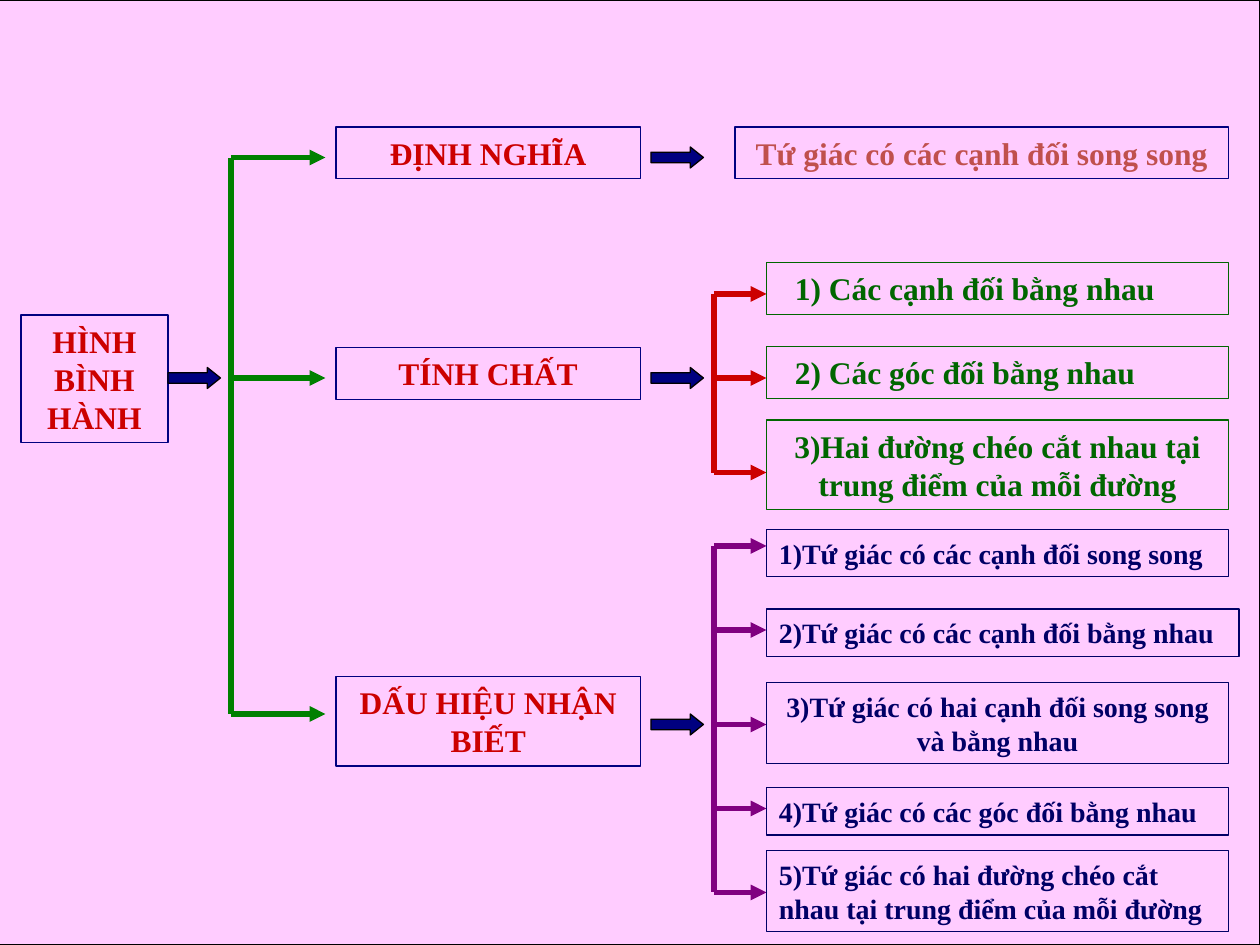
from lxml import etree
from pptx import Presentation
from pptx import util as u
from pptx.dml import color
from pptx.enum import shapes, text
from pptx.oxml import ns

Pt = u.Pt
LEFT, CENTER = text.PP_ALIGN.LEFT, text.PP_ALIGN.CENTER
NAVY, RED, GREEN, INK = "000080", "CC0000", "006600", "000066"


def rgb(value):
    return color.RGBColor.from_string(value)


def apply_format(target, values):
    for name, value in values.items():
        setattr(target, name, value)


def draw_shape(page, kind, box, outline, fill=None):
    shape = page.shapes.add_shape(kind, *(Pt(length) for length in box))
    shape.shadow.inherit = False
    if fill:
        shape.fill.solid()
        shape.fill.fore_color.rgb = rgb(fill)
    else:
        shape.fill.background()
    shape.line.color.rgb = rgb(outline)
    shape.line.width = Pt(0.75)
    return shape


def draw_label(page, box, words, ink, outline, size=18, align=CENTER, indent=0):
    shape = draw_shape(page, shapes.MSO_SHAPE.RECTANGLE, box, outline)
    frame = shape.text_frame
    apply_format(frame, {
        "word_wrap": True,
        "vertical_anchor": text.MSO_ANCHOR.MIDDLE,
        "margin_left": Pt(7.2 + indent),
    })
    para = frame.paragraphs[0]
    para.alignment = align
    span = para.add_run()
    span.text = words
    apply_format(span.font, {"name": "Times New Roman", "size": Pt(size), "bold": True})
    span.font.color.rgb = rgb(ink)


def draw_column(page, box, entries, ink, outline, size=18):
    left, top, width = box
    for offset, lines, words, options in entries:
        style = dict(options)
        full_width = width + style.pop("extra", 0)
        height = 8 + 1.2 * size * lines
        draw_label(page, (left, top + offset, full_width, height),
                   words, ink, outline, size, **style)


def draw_line(page, start, end, ink, arrow=False):
    line = page.shapes.add_connector(
        shapes.MSO_CONNECTOR.STRAIGHT, *(Pt(length) for length in start + end))
    line.line.color.rgb = rgb(ink)
    line.line.width = Pt(3)
    if arrow:
        etree.SubElement(line.line._get_or_add_ln(), ns.qn("a:tailEnd"), type="triangle")
    etree.SubElement(line._element.spPr, ns.qn("a:effectLst"))


def draw_branch(page, box, offsets, ink):
    left, top, width = box
    draw_line(page, (left, top), (left, top + offsets[-1]), ink)
    for offset in offsets:
        draw_line(page, (left, top + offset), (left + width, top + offset), ink, True)


def draw_block_arrow(page, left, top):
    arrow = draw_shape(page, shapes.MSO_SHAPE.RIGHT_ARROW, (left, top, 30, 12), "000000", NAVY)
    arrow.adjustments[1] = 0.625


def draw_topics(page, box):
    left, top = box
    draw_column(page, (left, top + 107.4, 84), [(0, 3, "HÌNH BÌNH HÀNH", {})], RED, NAVY)
    draw_block_arrow(page, left + 84, top + 137.4)
    draw_branch(page, (left + 120, top + 17.4, 54), [0, 126, 318], "008000")
    draw_column(page, (left + 180, top, 174), [
        (0, 1, "ĐỊNH NGHĨA", {}),
        (126, 1, "TÍNH CHẤT", {}),
        (314, 2, "DẤU HIỆU NHẬN BIẾT", {}),
    ], RED, NAVY)
    for offset in (11.4, 137.4, 335.4):
        draw_block_arrow(page, left + 360, top + offset)


def draw_definition(page, box):
    draw_column(page, box, [(0, 1, "Tứ giác có các cạnh đối song song", {})], "C0504D", NAVY)


def draw_properties(page, box):
    left, top, width = box
    draw_branch(page, (left, top + 18, 30), [0, 48, 102], RED)
    indented = {"align": LEFT, "indent": 9}
    draw_column(page, (left + 30, top, width - 30), [
        (0, 1, "1) Các cạnh đối bằng nhau", indented),
        (48, 1, "2) Các góc đối bằng nhau", indented),
        (90, 2, "3)Hai đường chéo cắt nhau tại trung điểm của mỗi đường", {}),
    ], GREEN, GREEN)


def draw_signs(page, box):
    left, top, width = box
    draw_branch(page, (left, top + 9.6, 30), [0, 48, 102, 150, 198], "800080")
    plain = {"align": LEFT}
    draw_column(page, (left + 30, top, width - 30), [
        (0, 1, "1)Tứ giác có các cạnh đối song song", plain),
        (45.6, 1, "2)Tứ giác có các cạnh đối bằng nhau", {"align": LEFT, "extra": 6}),
        (87.6, 2, "3)Tứ giác có hai cạnh đối song song và bằng nhau", {}),
        (147.6, 1, "4)Tứ giác có các góc đối bằng nhau", plain),
        (183.6, 2, "5)Tứ giác có hai đường chéo cắt nhau tại trung điểm của mỗi đường", plain),
    ], INK, INK, 16)


def main():
    deck = Presentation()
    deck.slide_width, deck.slide_height = Pt(720), Pt(540)
    page = deck.slides.add_slide(deck.slide_layouts[6])
    draw_shape(page, shapes.MSO_SHAPE.RECTANGLE, (-12, 0, 732, 540), "000000", "FFCCFF")
    draw_topics(page, (12, 72.6))
    draw_definition(page, (420, 72.6, 282))
    draw_properties(page, (408, 150, 294))
    draw_signs(page, (408, 302.4, 294))
    deck.save("out.pptx")


if __name__ == "__main__":
    main()
